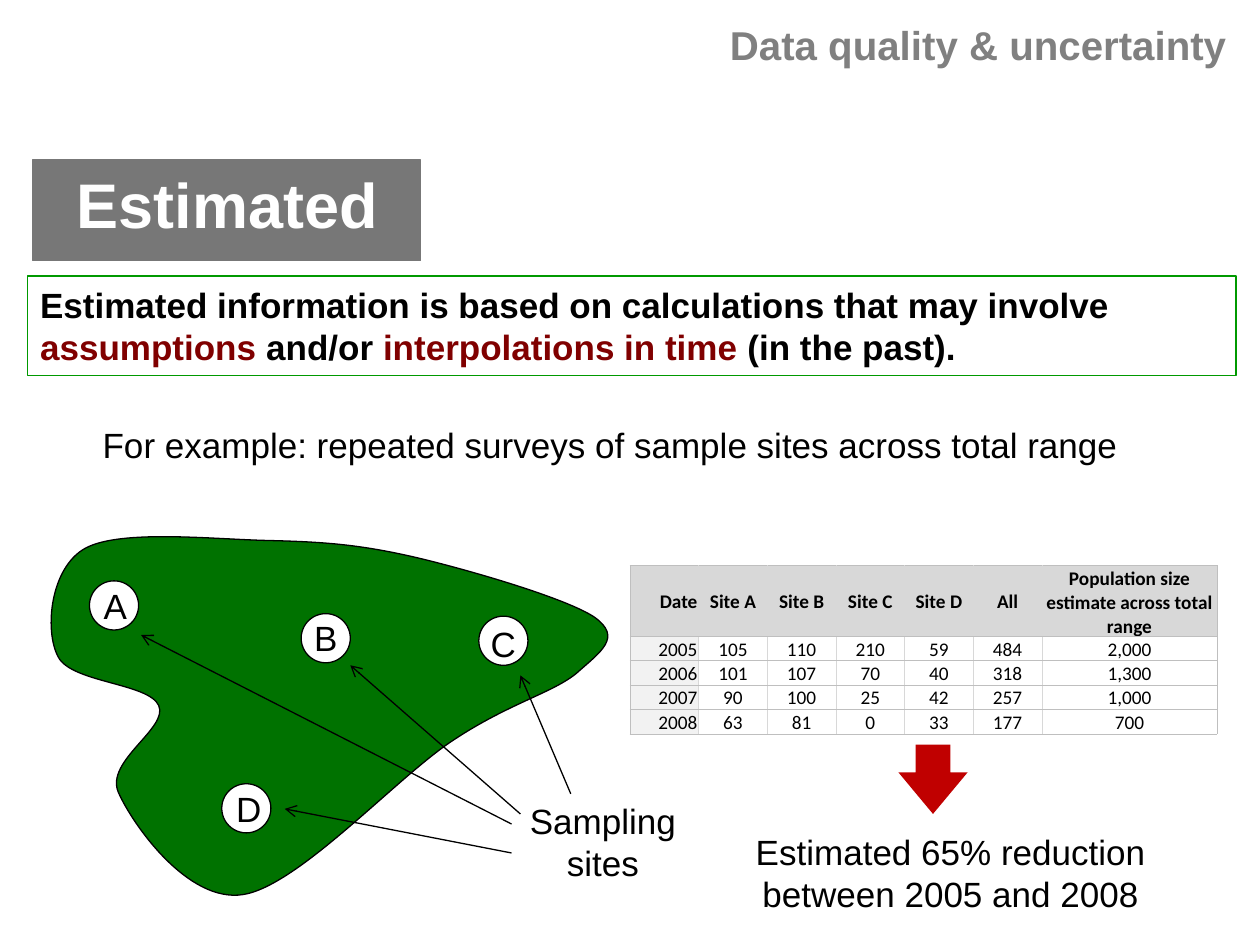
from lxml import etree
from pptx import Presentation
from pptx.dml.color import RGBColor
from pptx.enum.shapes import MSO_CONNECTOR, MSO_SHAPE
from pptx.enum.text import MSO_ANCHOR, MSO_AUTO_SIZE, PP_ALIGN
from pptx.oxml import parse_xml
from pptx.oxml.ns import nsdecls, qn
from pptx.util import Inches, Pt

LEFT, CENTER, RIGHT = PP_ALIGN.LEFT, PP_ALIGN.CENTER, PP_ALIGN.RIGHT
MIDDLE = MSO_ANCHOR.MIDDLE
RECTANGLE, OVAL, DOWN_ARROW = MSO_SHAPE.RECTANGLE, MSO_SHAPE.OVAL, MSO_SHAPE.DOWN_ARROW
STRAIGHT = MSO_CONNECTOR.STRAIGHT
GROW = MSO_AUTO_SIZE.SHAPE_TO_FIT_TEXT

BLACK = RGBColor(0x00, 0x00, 0x00)
WHITE = RGBColor(0xFF, 0xFF, 0xFF)
TITLE_GREY = RGBColor(0x80, 0x80, 0x80)
BANNER_GREY = RGBColor(0x77, 0x77, 0x77)
BORDER_GREEN = RGBColor(0x00, 0x99, 0x00)
RANGE_GREEN = RGBColor(0x00, 0x72, 0x00)
MAROON = RGBColor(0x80, 0x00, 0x00)
ARROW_RED = RGBColor(0xC0, 0x00, 0x00)
HEADER_FILL = RGBColor(0xD8, 0xD8, 0xD8)
YEAR_FILL = RGBColor(0xF2, 0xF2, 0xF2)
OUTER_BORDER = RGBColor(0xBF, 0xBF, 0xBF)
INNER_BORDER = RGBColor(0xD8, 0xD8, 0xD8)


def write(frame, phrases, size=20, bold=False, align=CENTER, font="Arial"):
    frame.word_wrap = True
    paragraph = frame.paragraphs[0]
    paragraph.alignment = align
    for text, color in phrases:
        run = paragraph.add_run()
        run.text = text
        run.font.name = font
        run.font.size = Pt(size)
        run.font.bold = bold
        run.font.color.rgb = color


def paint(shape, fill, line):
    shape.shadow.inherit = False
    if fill is None:
        shape.fill.background()
    else:
        shape.fill.solid()
        shape.fill.fore_color.rgb = fill
    if line is None:
        shape.line.fill.background()
    else:
        shape.line.color.rgb = line
        shape.line.width = Pt(0.75)


prs = Presentation()
prs.slide_width, prs.slide_height = Inches(10), Inches(7.5)
slide = prs.slides.add_slide(prs.slide_layouts[5])
shapes = slide.shapes

title = shapes.title
title.left, title.top = Inches(3.98), Inches(0.11)
title.width, title.height = Inches(5.86), Inches(0.49)
write(title.text_frame, [("Data quality & uncertainty", TITLE_GREY)], 23, True, RIGHT)
title.text_frame.vertical_anchor = MIDDLE

banner = shapes.add_shape(RECTANGLE, Inches(0.26), Inches(1.27), Inches(3.08), Inches(0.8))
paint(banner, BANNER_GREY, BANNER_GREY)
write(banner.text_frame, [("Estimated", WHITE)], 36, True, LEFT)
banner.text_frame.margin_left = Inches(0.35)
banner.text_frame.margin_bottom = Inches(0.16)

definition = shapes.add_shape(RECTANGLE, Inches(0.22), Inches(2.19), Inches(9.59), Inches(0.79))
paint(definition, None, BORDER_GREEN)
write(definition.text_frame, [
    ("Estimated information is based on calculations that may involve ", BLACK),
    ("assumptions ", MAROON), ("and/or", BLACK),
    (" interpolations in time ", MAROON), ("(in the past).", BLACK)], bold=True, align=LEFT)

range_start = (0.68, 4.35)
range_curves = [
    (0.96, 4.2), (1.69, 4.28), (2.12, 4.29),
    (2.56, 4.3), (2.84, 4.32), (3.28, 4.42),
    (3.71, 4.52), (4.5, 4.75), (4.72, 4.9),
    (4.94, 5.06), (4.77, 5.17), (4.58, 5.34),
    (4.39, 5.5), (4.04, 5.58), (3.59, 5.88),
    (3.15, 6.17), (2.37, 7.03), (1.93, 7.1),
    (1.49, 7.17), (1.05, 6.54), (0.94, 6.29),
    (0.83, 6.04), (1.34, 5.78), (1.26, 5.6),
    (1.18, 5.42), (0.56, 5.42), (0.46, 5.21),
    (0.35, 5), (0.4, 4.5), range_start,
]
builder = shapes.build_freeform(Inches(range_start[0]), Inches(range_start[1]))
builder.add_line_segments([(Inches(x), Inches(y)) for x, y in range_curves], close=True)
total_range = builder.convert_to_shape()
paint(total_range, RANGE_GREEN, BLACK)
segments = list(total_range._element.iter(qn("a:lnTo")))
for i in range(0, len(range_curves), 3):
    curve = etree.Element(qn("a:cubicBezTo"))
    segments[i].addprevious(curve)
    for segment in segments[i:i + 3]:
        curve.append(segment[0])
        segment.getparent().remove(segment)

for site, left, top, label_left, label_top in [
        ("A", 0.71, 4.61, 0.64, 4.59), ("B", 2.39, 4.87, 2.31, 4.84),
        ("C", 3.8, 4.89, 3.72, 4.89), ("D", 1.76, 6.22, 1.7, 6.2)]:
    marker = shapes.add_shape(OVAL, Inches(left), Inches(top), Inches(0.39), Inches(0.39))
    paint(marker, WHITE, BLACK)
    label = shapes.add_textbox(Inches(label_left), Inches(label_top), Inches(0.55), Inches(0.44))
    write(label.text_frame, [(site, BLACK)])
    label.text_frame.auto_size = GROW

for text, left, top, width, height in [
        ("For example: repeated surveys of sample sites across total range", -0.04, 3.31, 9.77, 0.44),
        ("Sampling sites", 3.8, 6.3, 1.97, 0.77),
        ("Estimated 65% reduction between 2005 and 2008", 5.68, 6.54, 3.73, 0.77)]:
    caption = shapes.add_textbox(Inches(left), Inches(top), Inches(width), Inches(height))
    write(caption.text_frame, [(text, BLACK)])
    caption.text_frame.auto_size = GROW

for x1, y1, x2, y2 in [(4.53, 6.3, 4.13, 5.36), (4.06, 6.54, 1.12, 5.04),
                       (4.06, 6.77, 2.26, 6.42), (4.13, 6.46, 2.78, 5.28)]:
    pointer = shapes.add_connector(STRAIGHT, Inches(x1), Inches(y1), Inches(x2), Inches(y2))
    pointer.line.color.rgb = BLACK
    pointer.line.width = Pt(0.75)
    etree.SubElement(pointer.line._get_or_add_ln(), qn("a:tailEnd"), type="arrow")
    etree.SubElement(pointer._element.spPr, qn("a:effectLst"))

survey_rows = [
    ["Date", "Site A", "Site B", "Site C", "Site D", "All",
     "Population size estimate across total range"],
    ["2005", "105", "110", "210", "59", "484", "2,000"],
    ["2006", "101", "107", "70", "40", "318", "1,300"],
    ["2007", "90", "100", "25", "42", "257", "1,000"],
    ["2008", "63", "81", "0", "33", "177", "700"],
]
last_col = len(survey_rows[0]) - 1
survey = shapes.add_table(len(survey_rows), last_col + 1, Inches(5), Inches(4.49),
                          Inches(4.66), Inches(1.32)).table
survey.first_row = survey.horz_banding = False
for c, column in enumerate(survey.columns):
    column.width = Inches(4.66 - 0.545 * last_col if c == last_col else 0.545)
for r, values in enumerate(survey_rows):
    survey.rows[r].height = Inches(0.19 if r else 0.56)
    for c, value in enumerate(values):
        cell = survey.cell(r, c)
        cell.vertical_anchor = MIDDLE
        cell.margin_left = cell.margin_right = cell.margin_top = Inches(0.01)
        cell.margin_bottom = 0
        write(cell.text_frame, [(value, BLACK)], 11, r == 0, CENTER if c else RIGHT, "Calibri")
        borders = {"lnL": INNER_BORDER if c else OUTER_BORDER,
                   "lnR": OUTER_BORDER if c == last_col else INNER_BORDER,
                   "lnT": OUTER_BORDER, "lnB": OUTER_BORDER}
        for side, color in borders.items():
            cell._tc.get_or_add_tcPr().append(parse_xml(
                f'<a:{side} {nsdecls("a")} w="6350"><a:solidFill>'
                f'<a:srgbClr val="{color}"/></a:solidFill></a:{side}>'))
        if r == 0 or c == 0:
            cell.fill.solid()
            cell.fill.fore_color.rgb = YEAR_FILL if r else HEADER_FILL
        else:
            cell.fill.background()

decline = shapes.add_shape(DOWN_ARROW, Inches(7.13), Inches(5.91), Inches(0.55), Inches(0.55))
decline.adjustments[0], decline.adjustments[1] = 0.5, 0.6
paint(decline, ARROW_RED, None)

prs.save("out.pptx")
